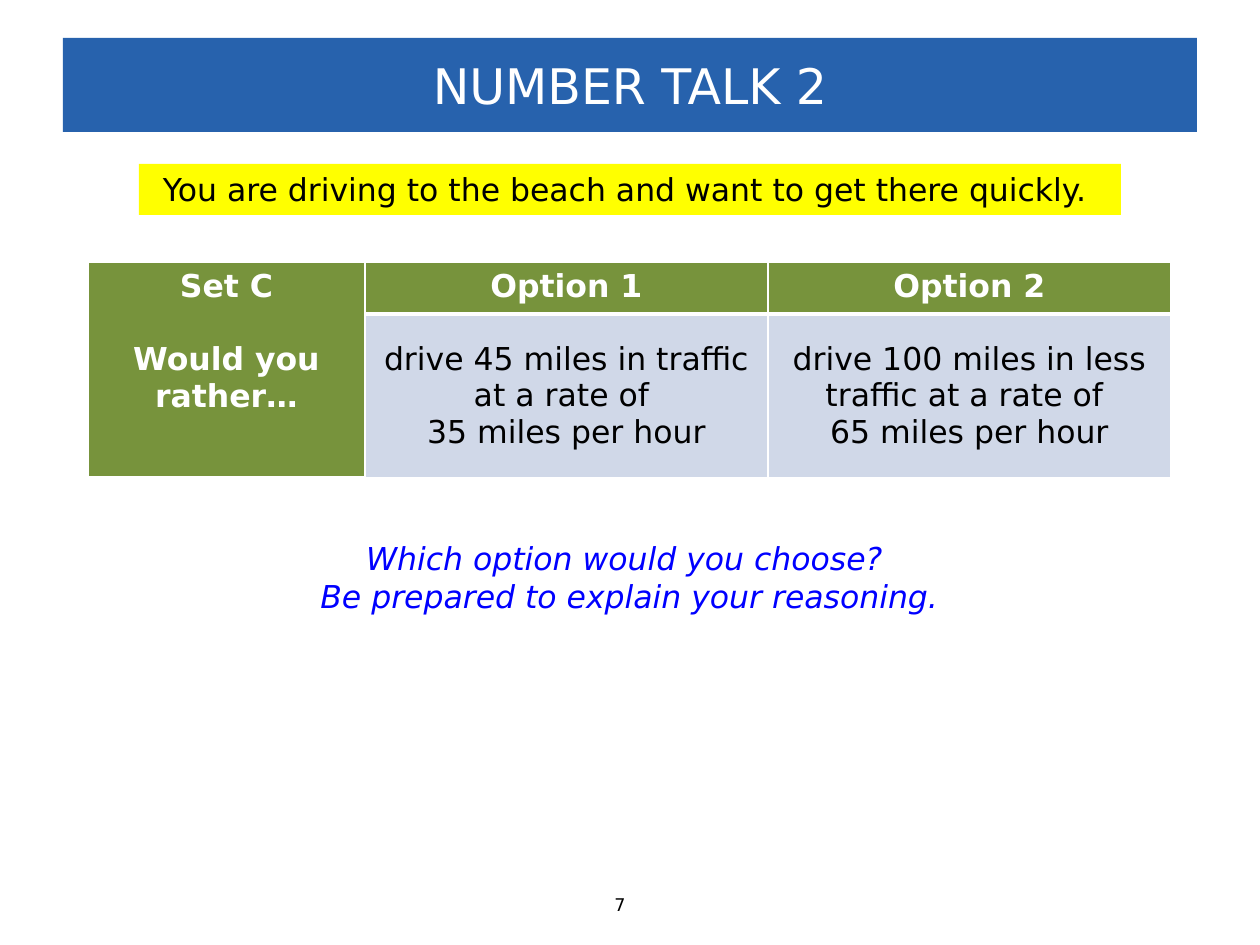
"""Build the Number Talk 2 slide with its two-option comparison table."""
import pptx
import pptx.dml.color
import pptx.enum.shapes
import pptx.enum.text
import pptx.util
from lxml import etree

SCALE = 914400 / 126
FACE = "DejaVu Sans"
NS = "http://schemas.openxmlformats.org/drawingml/2006/main"
MID = pptx.enum.text.MSO_ANCHOR.MIDDLE
TOP = pptx.enum.text.MSO_ANCHOR.TOP


def color(code):
    return pptx.dml.color.RGBColor.from_string(code)


def write(frame, lines, look, gap=0):
    frame.word_wrap = True
    for i, line in enumerate(lines):
        para = frame.paragraphs[0] if i == 0 else frame.add_paragraph()
        para.alignment = pptx.enum.text.PP_ALIGN.CENTER
        if i and gap:
            para.space_before = pptx.util.Pt(gap)
        run = para.add_run()
        run.text = line
        run.font.color.rgb = color(look["color"])
        form = {"name": FACE, "size": pptx.util.Pt(look["size"]),
                "bold": look.get("bold", False), "italic": look.get("italic", False)}
        for key, value in form.items():
            setattr(run.font, key, value)


deck = pptx.Presentation()
deck.slide_width = pptx.util.Inches(10)
deck.slide_height = pptx.util.Inches(7.5)
slide = deck.slides.add_slide(deck.slide_layouts[6])

bars = [
    ((63, 38, 1134, 94), "2762AD", MID, "NUMBER TALK 2", {"size": 28, "color": "FFFFFF"}),
    ((139, 164, 982, 51), "FFFF00", TOP,
     "You are driving to the beach and want to get there quickly. ",
     {"size": 18, "color": "000000"}),
]
for box, fill, anchor, text, look in bars:
    bar = slide.shapes.add_shape(pptx.enum.shapes.MSO_SHAPE.RECTANGLE,
                                 *[round(n * SCALE) for n in box])
    bar.shadow.inherit = False
    bar.fill.solid()
    bar.fill.fore_color.rgb = color(fill)
    bar.line.fill.background()
    bar.text_frame.vertical_anchor = anchor
    write(bar.text_frame, [text], look)

cols, rows = [277, 403, 403], [52, 164]
box = (88, 262, sum(cols), sum(rows))
table = slide.shapes.add_table(2, 3, *[round(n * SCALE) for n in box]).table
for col, width in zip(table.columns, cols):
    col.width = round(width * SCALE)
for row, height in zip(table.rows, rows):
    row.height = round(height * SCALE)

head = {"size": 18, "color": "FFFFFF", "bold": True}
body = {"size": 18, "color": "000000"}
cells = [
    [["Set C", "Would you rather…"], ["Option 1"], ["Option 2"]],
    [[], ["drive 45 miles in traffic at a rate of ", "35 miles per hour"],
     ["drive 100 miles in less traffic at a rate of ", "65 miles per hour"]],
]
table.cell(0, 0).merge(table.cell(1, 0))
for r, line in enumerate(cells):
    for c, text in enumerate(line):
        cell = table.cell(r, c)
        main = r == 0 or c == 0
        cell.vertical_anchor = TOP if main else MID
        write(cell.text_frame, text, head if main else body, gap=0 if c else 21)
        thick = {"lnL": 1, "lnR": 1, "lnT": 1 if main else 3, "lnB": 3 if main else 1}
        props = cell._tc.get_or_add_tcPr()
        for side, width in thick.items():
            edge = etree.SubElement(props, f"{{{NS}}}{side}", w=str(pptx.util.Pt(width)))
            fill = etree.SubElement(edge, f"{{{NS}}}solidFill")
            etree.SubElement(fill, f"{{{NS}}}srgbClr", val="FFFFFF")
        cell.fill.solid()
        cell.fill.fore_color.rgb = color("77933C" if main else "D0D8E8")

notes = [
    ((307, 533, 645, 89), ["Which option would you choose? ",
                           "Be prepared to explain your reasoning."],
     {"size": 18, "color": "0000FF", "italic": True}),
    ((602, 888, 55, 34), ["7"], {"size": 10, "color": "000000"}),
]
for box, text, look in notes:
    note = slide.shapes.add_textbox(*[round(n * SCALE) for n in box])
    write(note.text_frame, text, look)
note.text_frame.word_wrap = False
note.text_frame.paragraphs[0].alignment = pptx.enum.text.PP_ALIGN.LEFT

deck.save("out.pptx")
